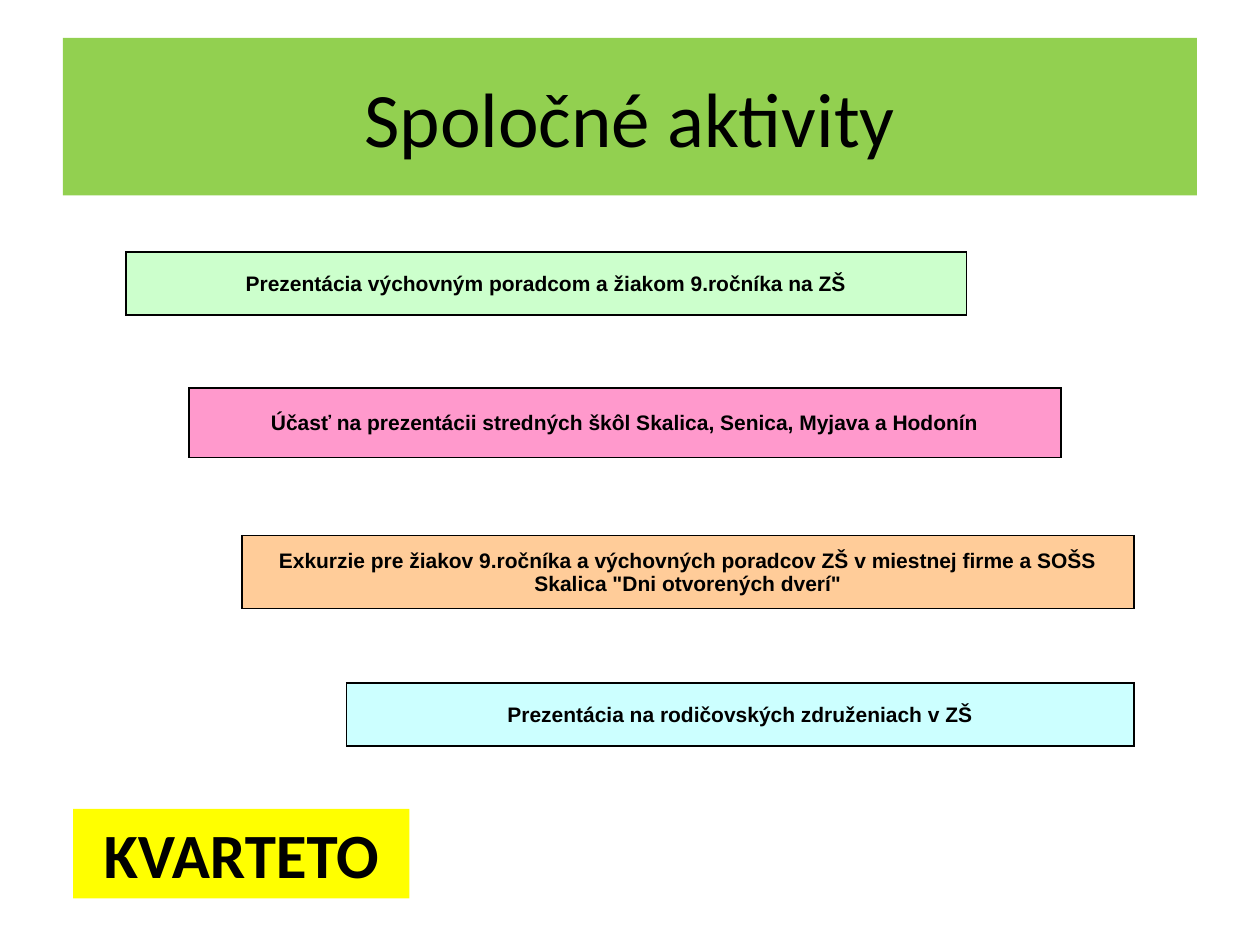
from lxml.etree import SubElement
from pptx import Presentation
from pptx.dml.color import RGBColor
from pptx.enum.shapes import MSO_SHAPE
from pptx.enum.text import MSO_ANCHOR, PP_ALIGN
from pptx.oxml.ns import qn
from pptx.util import Inches, Pt

BLACK = RGBColor(0x00, 0x00, 0x00)
LIME = RGBColor(0x92, 0xD0, 0x50)
YELLOW = RGBColor(0xFF, 0xFF, 0x00)
GREEN = RGBColor(0xCC, 0xFF, 0xCC)
PINK = RGBColor(0xFF, 0x99, 0xCC)
ORANGE = RGBColor(0xFF, 0xCC, 0x99)
CYAN = RGBColor(0xCC, 0xFF, 0xFF)

TITLE_FONT = {"name": "Calibri", "size": Pt(44), "bold": False}
LABEL_FONT = {"name": "Calibri", "size": Pt(36), "bold": True}
ACTIVITY_FONT = {"name": "Arial", "size": Pt(12), "bold": True}

# Left, top, width, height, fill, text
ACTIVITIES = [
    (1, 2, 6.67, 0.5, GREEN,
     "Prezentácia výchovným poradcom a žiakom 9.ročníka na ZŠ"),
    (1.5, 3.08, 6.92, 0.55, PINK,
     "Účasť na prezentácii stredných škôl Skalica, Senica, Myjava a Hodonín"),
    (1.92, 4.25, 7.08, 0.58, ORANGE,
     "Exkurzie pre žiakov 9.ročníka a výchovných poradcov ZŠ "
     'v miestnej firme a SOŠS Skalica "Dni otvorených dverí"'),
    (2.75, 5.42, 6.25, 0.5, CYAN,
     "Prezentácia na rodičovských združeniach v ZŠ"),
]


def write_text(frame, text, font_values):
    frame.word_wrap = True
    para = frame.paragraphs[0]
    para.alignment = PP_ALIGN.CENTER
    span = para.add_run()
    span.text = text
    for name, value in font_values.items():
        setattr(span.font, name, value)
    span.font.color.rgb = BLACK


def add_banner(page, place, fill, text, font_values, anchor):
    box = page.shapes.add_shape(MSO_SHAPE.RECTANGLE, *map(Inches, place))
    box.shadow.inherit = False
    box.fill.solid()
    box.fill.fore_color.rgb = fill
    box.line.fill.background()
    box.text_frame.vertical_anchor = anchor
    write_text(box.text_frame, text, font_values)


def add_borders(cell):
    properties = cell._tc.get_or_add_tcPr()
    # Borders come before the fill in the cell properties
    for position, side in enumerate(("lnL", "lnR", "lnT", "lnB")):
        line = SubElement(properties, qn(f"a:{side}"), w=str(Pt(1)))
        fill = SubElement(line, qn("a:solidFill"))
        SubElement(fill, qn("a:srgbClr"), val=str(BLACK))
        properties.insert(position, line)


def add_activity(page, left, top, width, height, fill, text):
    place = map(Inches, (left, top, width, height))
    table = page.shapes.add_table(1, 1, *place).table
    table.first_row = table.horz_banding = False
    cell = table.cell(0, 0)
    cell.fill.solid()
    cell.fill.fore_color.rgb = fill
    cell.vertical_anchor = MSO_ANCHOR.MIDDLE
    margins = {"left": 0.01, "right": 0.01, "top": 0.01, "bottom": 0}
    for side, size in margins.items():
        setattr(cell, f"margin_{side}", Inches(size))
    write_text(cell.text_frame, text, ACTIVITY_FONT)
    add_borders(cell)


def main():
    deck = Presentation()
    deck.slide_width, deck.slide_height = Inches(10), Inches(7.5)
    page = deck.slides.add_slide(deck.slide_layouts[6])

    # Title band
    add_banner(page, (0.5, 0.3, 9, 1.25), LIME, "Spoločné aktivity",
               TITLE_FONT, MSO_ANCHOR.MIDDLE)

    # Staircase of activities
    for activity in ACTIVITIES:
        add_activity(page, *activity)

    # Project label
    add_banner(page, (0.58, 6.42, 2.67, 0.71), YELLOW, "KVARTETO",
               LABEL_FONT, MSO_ANCHOR.TOP)

    deck.save("out.pptx")


if __name__ == "__main__":
    main()
